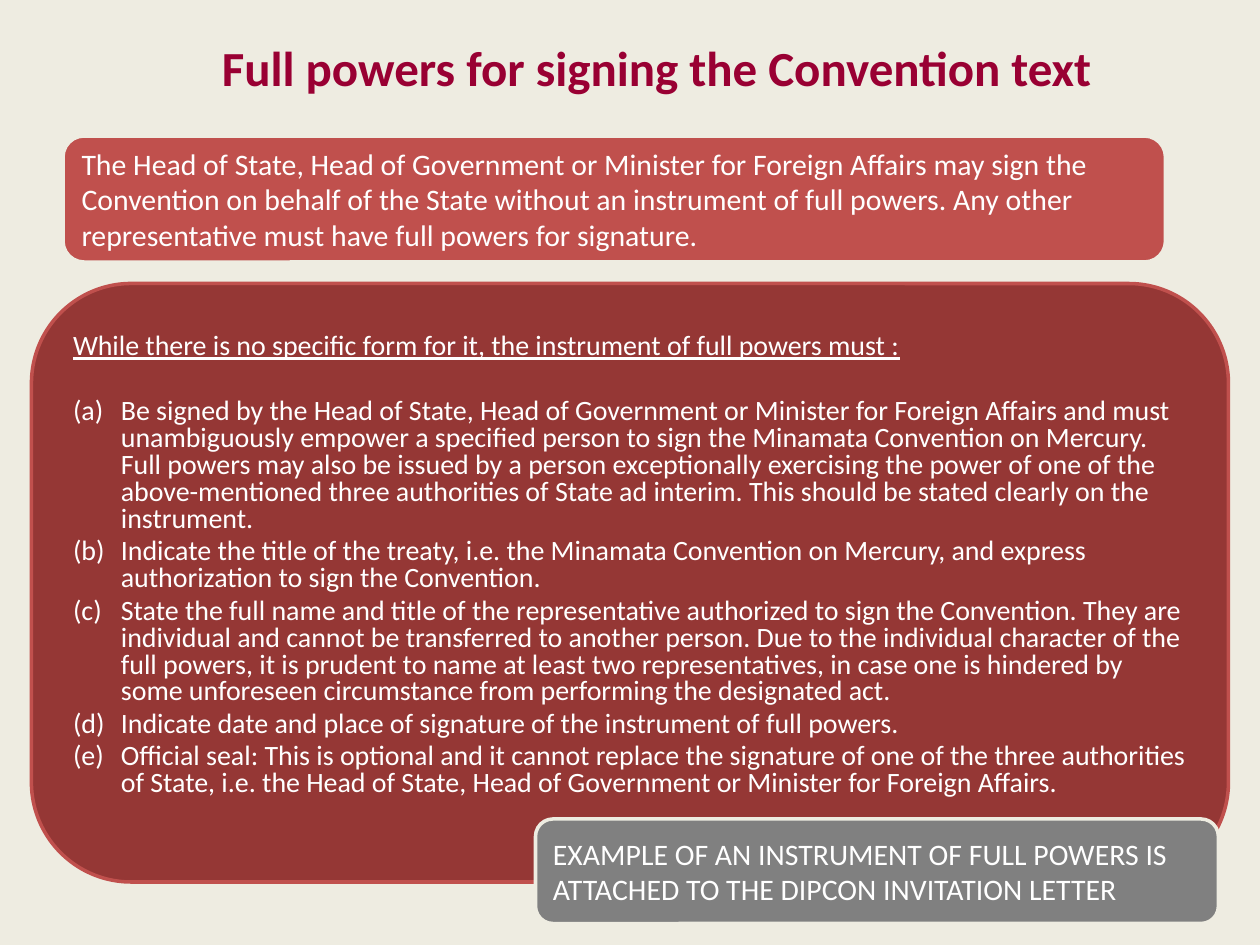
from pptx import Presentation
from pptx.dml.color import RGBColor
from pptx.enum.shapes import MSO_SHAPE
from pptx.enum.text import MSO_ANCHOR, PP_ALIGN
from pptx.oxml.ns import qn
from pptx.util import Inches, Pt

CREAM, RED, DARK_RED, GRAY = "EEECE1", "C0504D", "953735", "808080"
WHITE, CRIMSON = "FFFFFF", "990033"

TITLE = "Full powers for signing the Convention text"
SIGNATORIES = (
    "The Head of State, Head of Government or Minister for Foreign Affairs may sign the "
    "Convention on behalf of the State without an instrument of full powers. Any other "
    "representative must have full powers for signature."
)
EXAMPLE = "EXAMPLE OF AN INSTRUMENT OF FULL POWERS IS ATTACHED TO THE DIPCON INVITATION LETTER"
HEADING = "While there is no specific form for it, the instrument of full powers must :"
REQUIREMENTS = [
    "Be signed by the Head of State, Head of Government or Minister for Foreign Affairs and must "
    "unambiguously empower a specified person to sign the Minamata Convention on Mercury. "
    "Full powers may also be issued by a person exceptionally exercising the power of one of the "
    "above-mentioned three authorities of State ad interim. This should be stated clearly on the "
    "instrument.",
    "Indicate the title of the treaty, i.e. the Minamata Convention on Mercury, and express "
    "authorization to sign the Convention.",
    "State the full name and title of the representative authorized to sign the Convention. They are "
    "individual and cannot be transferred to another person. Due to the individual character of the "
    "full powers, it is prudent to name at least two representatives, in case one is hindered by "
    "some unforeseen circumstance from performing the designated act.",
    "Indicate date and place of signature of the instrument of full powers.",
    "Official seal: This is optional and it cannot replace the signature of one of the three authorities "
    "of State, i.e. the Head of State, Head of Government or Minister for Foreign Affairs.",
]


def color(hex_value):
    return RGBColor.from_string(hex_value)


def set_values(target, values):
    for name, value in values.items():
        setattr(target, name, value)


def write(paragraph, text, hex_color=WHITE, font=None, **layout):
    paragraph.text = text
    set_values(paragraph, {"alignment": PP_ALIGN.LEFT, **layout})
    set_values(paragraph.font, {"name": "Calibri", **(font or {})})
    paragraph.font.color.rgb = color(hex_color)


def add_title(slide):
    box = slide.shapes.add_textbox(Inches(1.42), Inches(0.22), Inches(7.58), Inches(0.62))
    set_values(box.text_frame, {"word_wrap": True, "vertical_anchor": MSO_ANCHOR.MIDDLE})
    write(box.text_frame.paragraphs[0], TITLE, CRIMSON,
          {"size": Pt(28), "bold": True}, alignment=PP_ALIGN.CENTER)


def add_panel(slide, left, top, width, height, fill, line):
    panel = slide.shapes.add_shape(
        MSO_SHAPE.ROUNDED_RECTANGLE, Inches(left), Inches(top), Inches(width), Inches(height))
    panel.shadow.inherit = False
    panel.fill.solid()
    panel.fill.fore_color.rgb = color(fill)
    panel.line.color.rgb = color(line)
    panel.line.width = Pt(2)
    set_values(panel.text_frame, {"word_wrap": True, "vertical_anchor": MSO_ANCHOR.MIDDLE})
    return panel.text_frame


def add_banner(slide, left, top, width, height, fill, text):
    frame = add_panel(slide, left, top, width, height, fill, CREAM)
    write(frame.paragraphs[0], text, font={"size": Pt(17)})


def add_letter_numbering(paragraph):
    """Number the paragraph (a), (b), ... with a hanging indent."""
    properties = paragraph._p.get_or_add_pPr()
    properties.set("marL", str(Inches(0.38)))
    properties.set("indent", str(-Inches(0.38)))
    numbering = properties.makeelement(qn("a:buAutoNum"), {"type": "alphaLcParenBoth"})
    properties.append(numbering)


def add_requirements(slide):
    frame = add_panel(slide, 0.25, 2.25, 9.5, 4.75, DARK_RED, RED)
    frame.margin_bottom = Inches(0.31)
    write(frame.paragraphs[0], HEADING, font={"size": Pt(16), "underline": True}, line_spacing=0.8)
    for index, text in enumerate(REQUIREMENTS):
        paragraph = frame.add_paragraph()
        add_letter_numbering(paragraph)
        write(paragraph, text, font={"size": Pt(16)}, line_spacing=0.8,
              space_before=Pt(3.2 if index else 21.8))


def main():
    presentation = Presentation()
    presentation.slide_width, presentation.slide_height = Inches(10), Inches(7.5)
    slide = presentation.slides.add_slide(presentation.slide_layouts[6])
    slide.background.fill.solid()
    slide.background.fill.fore_color.rgb = color(CREAM)
    add_title(slide)
    add_requirements(slide)
    add_banner(slide, 4.25, 6.5, 5.42, 0.83, GRAY, EXAMPLE)
    add_banner(slide, 0.5, 1.08, 8.75, 1, RED, SIGNATORIES)
    presentation.save("out.pptx")


if __name__ == "__main__":
    main()
